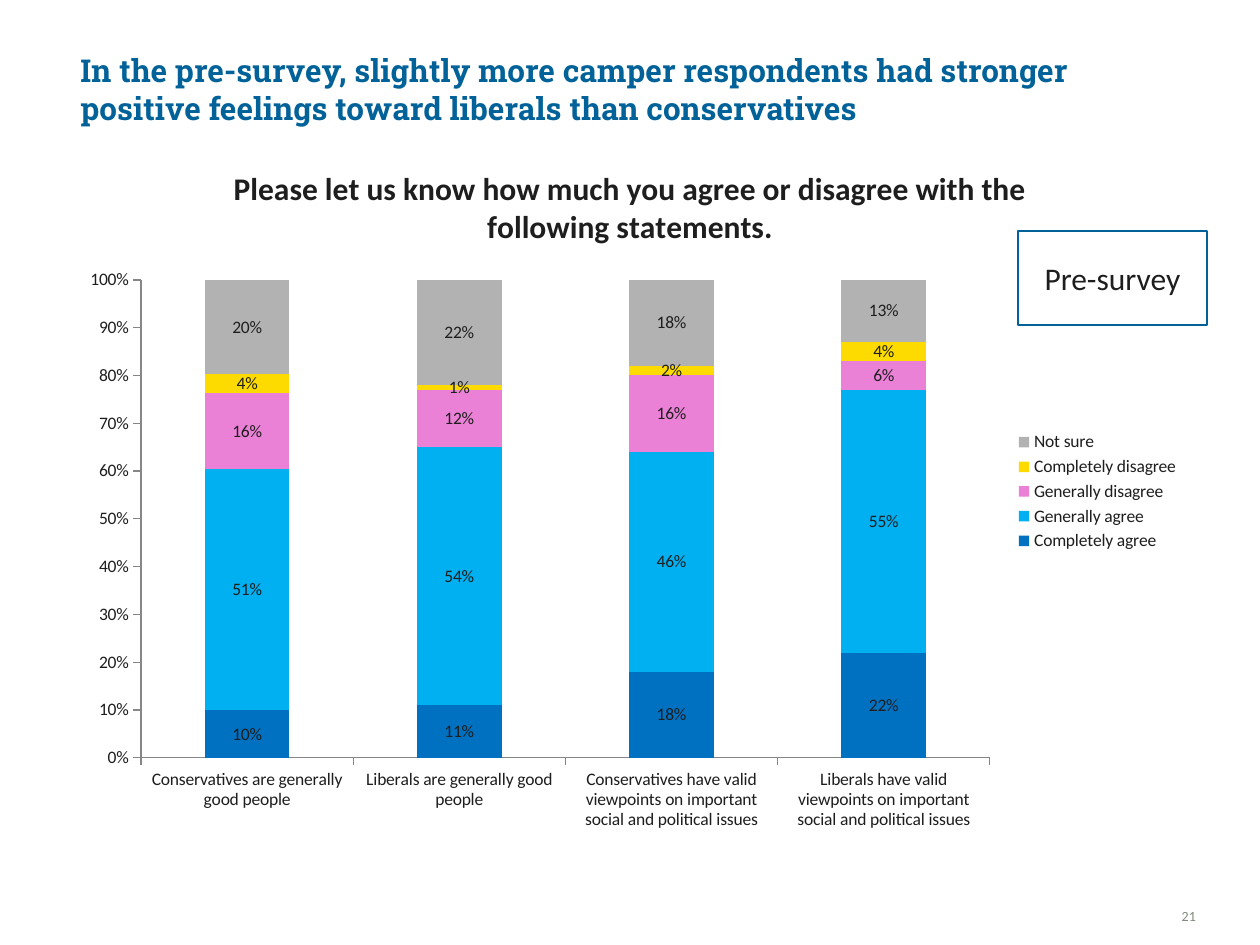
from lxml import etree
from pptx import Presentation
from pptx import util as u
from pptx.chart.data import CategoryChartData
from pptx.dml.color import RGBColor
from pptx.enum import chart as ch
from pptx.enum import shapes, text
from pptx.oxml.ns import qn

BLUE = RGBColor(0x00, 0x62, 0x98)
INK = RGBColor(0x1E, 0x1E, 0x1E)
SAGE = RGBColor(0x7E, 0x8B, 0x7A)
AXIS = RGBColor(0x86, 0x86, 0x86)
WHITE = RGBColor(0xFF, 0xFF, 0xFF)

HEADLINE = ("In the pre-survey, slightly more camper respondents had stronger "
            "positive feelings toward liberals than conservatives")
QUESTION = "Please let us know how much you agree or disagree with the following statements."
STATEMENTS = [
    "Conservatives are generally good people",
    "Liberals are generally good people",
    "Conservatives have valid viewpoints on important social and political issues",
    "Liberals have valid viewpoints on important social and political issues",
]
ANSWERS = [
    ("Completely agree", (0.10, 0.11, 0.18, 0.22), RGBColor(0x00, 0x70, 0xC0)),
    ("Generally agree", (0.51, 0.54, 0.46, 0.55), RGBColor(0x00, 0xB0, 0xF0)),
    ("Generally disagree", (0.16, 0.12, 0.16, 0.06), RGBColor(0xEB, 0x81, 0xD7)),
    ("Completely disagree", (0.04, 0.01, 0.02, 0.04), RGBColor(0xFE, 0xDB, 0x00)),
    ("Not sure", (0.20, 0.22, 0.18, 0.13), RGBColor(0xB2, 0xB2, 0xB2)),
]

HEADLINE_BOX = (68, 45, 1092, 88)
NUMBER_BOX = (1130, 891, 66, 33)
CHART_BOX = (68, 140, 1124, 703)
PLOT_BOX = (141, 280, 849, 478)
TAG_BOX = (1018, 231, 189, 94)

HEADLINE_FONT = {"name": "Roboto Slab", "size": u.Pt(18), "bold": True}
NUMBER_FONT = {"name": "Calibri", "size": u.Pt(8)}
TAG_FONT = {"name": "Calibri", "size": u.Pt(18)}
CHART_FONT = {"name": "Calibri", "size": u.Pt(10), "bold": False}
QUESTION_FONT = {"name": "Calibri", "size": u.Pt(18), "bold": True}


def px(value):
    return round(value * u.Inches(1) / 126)


def place(box):
    return [px(value) for value in box]


def set_font(font, values, color):
    for name, value in values.items():
        setattr(font, name, value)
    font.color.rgb = color


def write(shape, words, font, color, align, anchor):
    frame = shape.text_frame
    frame.word_wrap = True
    frame.vertical_anchor = anchor
    paragraph = frame.paragraphs[0]
    paragraph.alignment = align
    run = paragraph.add_run()
    run.text = words
    set_font(run.font, font, color)
    return frame


def fix_plot_area(chart):
    left, top, width, height = CHART_BOX
    plot_left, plot_top, plot_width, plot_height = PLOT_BOX
    plot_area = chart._chartSpace.find(".//" + qn("c:plotArea"))
    layout = plot_area.find(qn("c:layout"))
    if layout is None:
        layout = etree.Element(qn("c:layout"))
        plot_area.insert(0, layout)
    manual = etree.SubElement(layout, qn("c:manualLayout"))
    settings = {
        "layoutTarget": "inner", "xMode": "edge", "yMode": "edge",
        "x": round((plot_left - left) / width, 4),
        "y": round((plot_top - top) / height, 4),
        "w": round(plot_width / width, 4),
        "h": round(plot_height / height, 4),
    }
    for name, value in settings.items():
        etree.SubElement(manual, qn("c:" + name)).set("val", str(value))


def add_answer_chart(slide):
    data = CategoryChartData(number_format="0%")
    data.categories = STATEMENTS
    for name, values, _ in ANSWERS:
        data.add_series(name, values)
    chart = slide.shapes.add_chart(
        ch.XL_CHART_TYPE.COLUMN_STACKED_100, *place(CHART_BOX), data).chart
    set_font(chart.font, CHART_FONT, INK)

    chart.has_title = True
    run = chart.chart_title.text_frame.paragraphs[0].add_run()
    run.text = QUESTION
    set_font(run.font, QUESTION_FONT, INK)
    chart.chart_title.include_in_layout = False

    chart.has_legend = True
    chart.legend.position = ch.XL_LEGEND_POSITION.RIGHT
    chart.legend.include_in_layout = False

    for axis in (chart.category_axis, chart.value_axis):
        axis.has_major_gridlines = False
        axis.major_tick_mark = ch.XL_TICK_MARK.OUTSIDE
        axis.minor_tick_mark = ch.XL_TICK_MARK.NONE
        axis.format.line.color.rgb = AXIS
    chart.value_axis.minimum_scale = 0
    chart.value_axis.maximum_scale = 1
    chart.value_axis.major_unit = 0.1
    chart.value_axis.tick_labels.number_format = "0%"
    chart.value_axis.tick_labels.number_format_is_linked = False

    plot = chart.plots[0]
    plot.gap_width = 150
    plot.overlap = 100
    plot.vary_by_categories = False
    for series, (_, _, color) in zip(plot.series, ANSWERS):
        series.format.fill.solid()
        series.format.fill.fore_color.rgb = color
        labels = series.data_labels
        labels.show_value = True
        labels.number_format = "0%"
        labels.number_format_is_linked = False
        set_font(labels.font, CHART_FONT, INK)
    fix_plot_area(chart)


def main():
    presentation = Presentation()
    presentation.slide_width = u.Inches(10)
    presentation.slide_height = u.Inches(7.5)
    slide = presentation.slides.add_slide(presentation.slide_layouts[6])
    align, anchor = text.PP_ALIGN, text.MSO_ANCHOR

    headline = slide.shapes.add_textbox(*place(HEADLINE_BOX))
    write(headline, HEADLINE, HEADLINE_FONT, BLUE, align.LEFT, anchor.MIDDLE)

    number = slide.shapes.add_textbox(*place(NUMBER_BOX))
    frame = write(number, "21", NUMBER_FONT, SAGE, align.RIGHT, anchor.BOTTOM)
    for side in ("left", "top", "right", "bottom"):
        setattr(frame, "margin_" + side, 0)

    add_answer_chart(slide)

    tag = slide.shapes.add_shape(shapes.MSO_SHAPE.RECTANGLE, *place(TAG_BOX))
    tag.shadow.inherit = False
    tag.fill.solid()
    tag.fill.fore_color.rgb = WHITE
    tag.line.color.rgb = BLUE
    tag.line.width = u.Pt(1.5)
    write(tag, "Pre-survey", TAG_FONT, INK, align.CENTER, anchor.MIDDLE)

    presentation.save("out.pptx")


if __name__ == "__main__":
    main()
